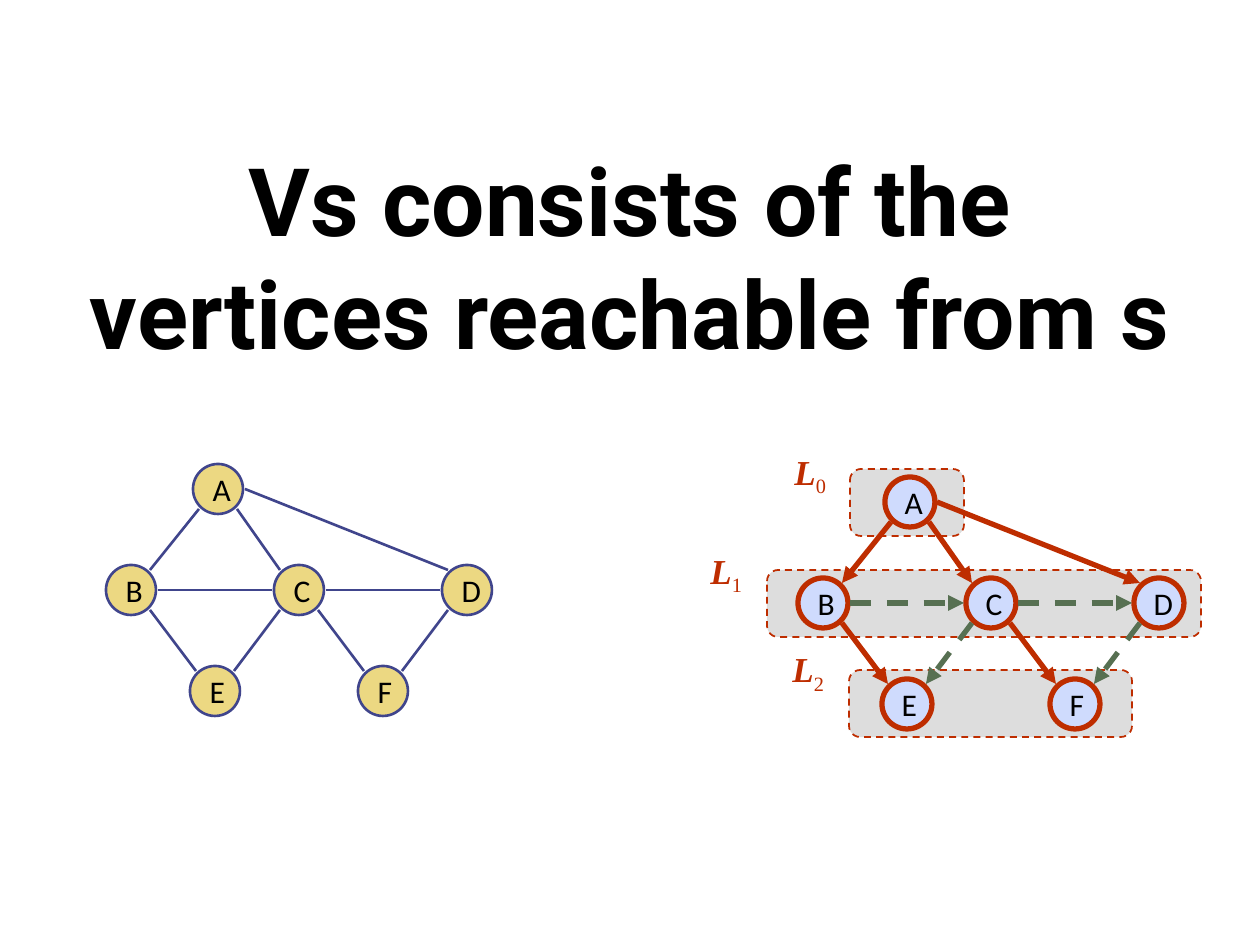
"""Build a slide showing a graph beside its breadth-first search levels."""
from lxml import etree
from pptx import Presentation
from pptx.dml.color import RGBColor
from pptx.enum.dml import MSO_LINE
from pptx.enum.shapes import MSO_CONNECTOR, MSO_SHAPE
from pptx.enum.text import MSO_ANCHOR, MSO_AUTO_SIZE, PP_ALIGN
from pptx.oxml.ns import qn
from pptx.util import Emu, Pt

PX = 914400 / 126
DASH = MSO_LINE.DASH
STRAIGHT = MSO_CONNECTOR.STRAIGHT
OVAL, ROUNDED = MSO_SHAPE.OVAL, MSO_SHAPE.ROUNDED_RECTANGLE
LEFT, CENTER, MIDDLE = PP_ALIGN.LEFT, PP_ALIGN.CENTER, MSO_ANCHOR.MIDDLE
COLORS = {
    "text": "000000", "plain_fill": "ECD882", "plain_line": "40458C",
    "visited_fill": "CFDBFD", "tree": "BE2D00", "cross": "577052",
    "level": "DDDDDD",
}
RADIUS = 25
VERTICES = {"A": (218, 489), "B": (131, 590), "C": (299, 590),
            "D": (467, 590), "E": (215, 691), "F": (383, 691)}
PORTS = {"left": (-27, 0), "right": (27, 0),
         "upper left": (-19, -20), "upper right": (19, -20),
         "lower left": (-19, 20), "lower right": (19, 20)}
EDGES = [
    ("A", "lower left", "B", "upper right", "tree"),
    ("A", "lower right", "C", "upper left", "tree"),
    ("A", "right", "D", "upper left", "tree"),
    ("B", "lower right", "E", "upper left", "tree"),
    ("C", "lower right", "F", "upper left", "tree"),
    ("B", "right", "C", "left", "cross"),
    ("C", "right", "D", "left", "cross"),
    ("C", "lower left", "E", "upper right", "cross"),
    ("D", "lower left", "F", "upper right", "cross"),
]
LEVELS = [
    ("0", (850, 469, 114, 67), (782, 444)),
    ("1", (767, 570, 434, 67), (698, 543)),
    ("2", (849, 670, 283, 67), (780, 641)),
]
GRAPHS = [
    (0, 0, "plain_fill", "plain_line", 1.5, False),
    (692, 13, "visited_fill", "tree", 3, True),
]


def emu(*lengths):
    return [Emu(round(length * PX)) for length in lengths]


def color(name):
    return RGBColor.from_string(COLORS[name])


prs = Presentation()
prs.slide_width, prs.slide_height = emu(1260, 945)
slide = prs.slides.add_slide(prs.slide_layouts[5])

title = slide.shapes.title
title.left, title.top, title.width, title.height = emu(63, 176, 1134, 158)
title.text_frame.text = "Vs consists of the vertices reachable from s"
title.text_frame.auto_size = MSO_AUTO_SIZE.NONE
title.text_frame.vertical_anchor = MIDDLE
heading = title.text_frame.paragraphs[0]
heading.alignment = CENTER
heading_font = heading.runs[0].font
heading_font.name, heading_font.size, heading_font.bold = "Roboto", Pt(54), True
heading_font.color.rgb = color("text")

for number, area, label_corner in LEVELS:
    level = slide.shapes.add_shape(ROUNDED, *emu(*area))
    level.shadow.inherit = False
    level.adjustments[0] = 0.167
    level.fill.solid()
    level.fill.fore_color.rgb = color("level")
    level.line.color.rgb = color("tree")
    level.line.width = Pt(1)
    level.line.dash_style = DASH

    label = slide.shapes.add_textbox(*emu(*label_corner, 64, 54))
    label.text_frame.word_wrap = True
    for part, is_letter in (("L", True), (number, False)):
        run = label.text_frame.paragraphs[0].add_run()
        run.text = part
        run.font.name, run.font.size = "Times New Roman", Pt(20)
        run.font.bold = run.font.italic = is_letter
        run.font.color.rgb = color("tree")
        if not is_letter:
            run._r.get_or_add_rPr().set("baseline", "-25000")

for dx, dy, vertex_fill, vertex_line, weight, directed in GRAPHS:
    graph = slide.shapes.add_group_shape()
    for letter, (x, y) in VERTICES.items():
        vertex = graph.shapes.add_shape(
            OVAL, *emu(x + dx - RADIUS, y + dy - RADIUS, 2 * RADIUS, 2 * RADIUS))
        vertex.shadow.inherit = False
        vertex.fill.solid()
        vertex.fill.fore_color.rgb = color(vertex_fill)
        vertex.line.color.rgb = color(vertex_line)
        vertex.line.width = Pt(weight)
        vertex.text_frame.text = letter
        vertex.text_frame.word_wrap = False
        vertex.text_frame.vertical_anchor = MIDDLE
        name = vertex.text_frame.paragraphs[0]
        name.alignment = LEFT
        name_font = name.runs[0].font
        name_font.name, name_font.size = "Calibri", Pt(18)
        name_font.color.rgb = color("text")

    for start, start_port, end, end_port, kind in EDGES:
        ends = [VERTICES[v][axis] + PORTS[port][axis] + (dx, dy)[axis]
                for v, port in ((start, start_port), (end, end_port))
                for axis in (0, 1)]
        edge = graph.shapes.add_connector(STRAIGHT, *emu(*ends))
        edge.line.color.rgb = color(kind if directed else vertex_line)
        edge.line.width = Pt(weight)
        if directed:
            if kind == "cross":
                edge.line.dash_style = DASH
            etree.SubElement(edge.line._get_or_add_ln(), qn("a:tailEnd"),
                             type="triangle")
        etree.SubElement(edge._element.spPr, qn("a:effectLst"))

prs.save("out.pptx")
